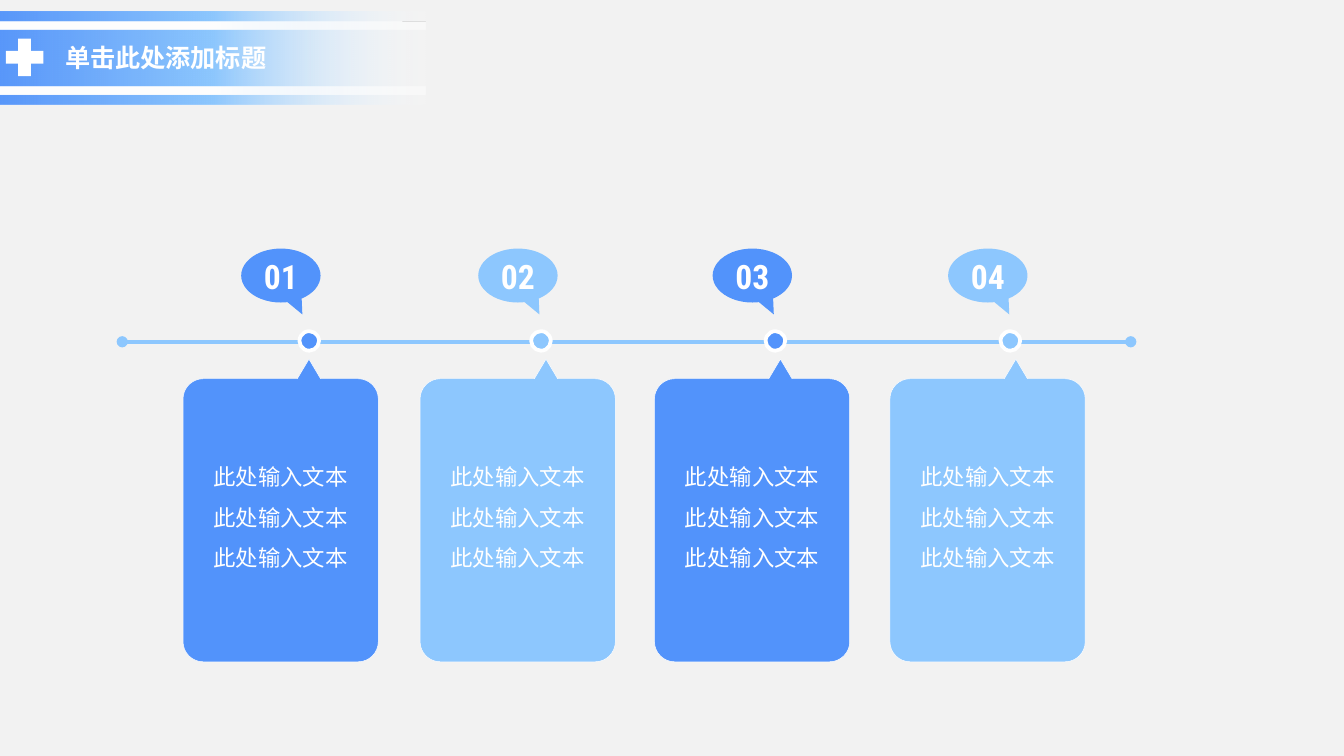
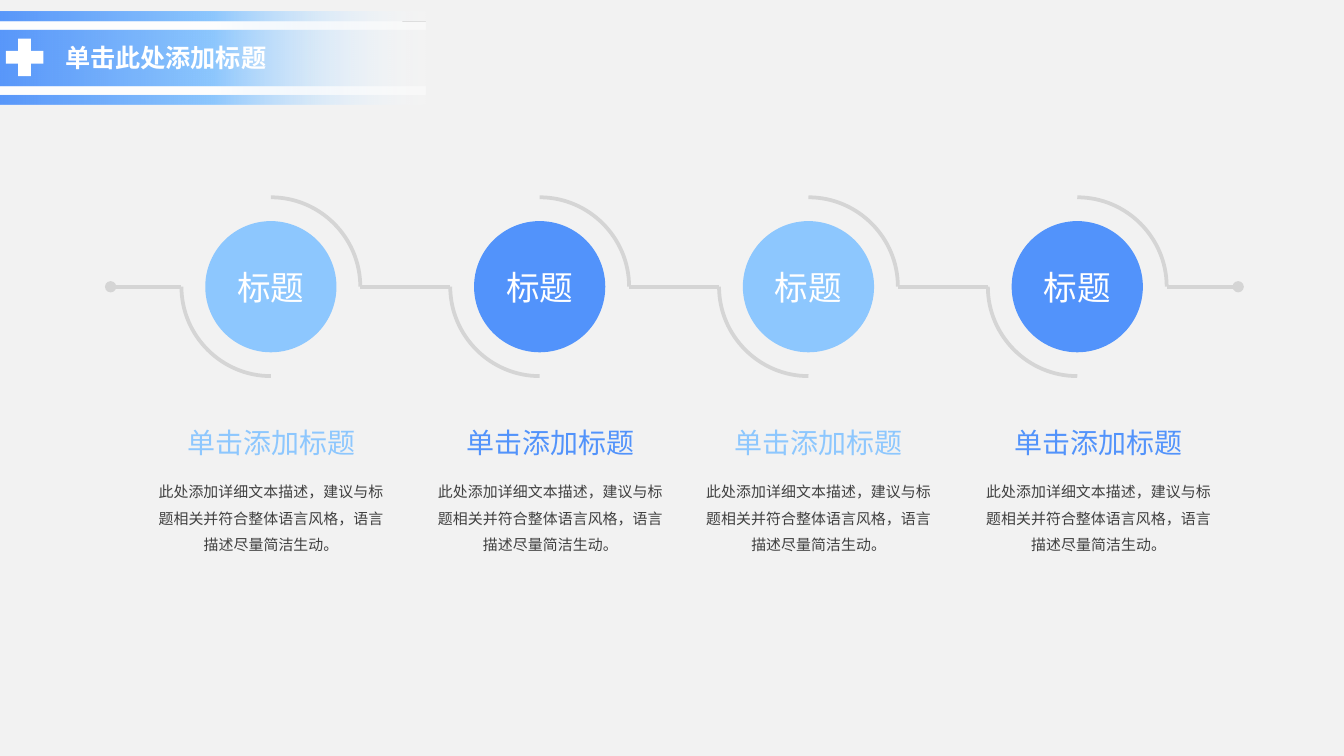
import math
from dataclasses import dataclass
from typing import NamedTuple, Optional

from lxml.etree import SubElement
from pptx import Presentation
from pptx.dml.color import RGBColor
from pptx.enum.shapes import MSO_CONNECTOR, MSO_SHAPE
from pptx.enum.text import MSO_ANCHOR, MSO_AUTO_SIZE, PP_ALIGN
from pptx.oxml.ns import qn
from pptx.util import Cm, Pt

RECT, OVAL, CROSS = MSO_SHAPE.RECTANGLE, MSO_SHAPE.OVAL, MSO_SHAPE.CROSS
CALLOUT = MSO_SHAPE.OVAL_CALLOUT
STRAIGHT = MSO_CONNECTOR.STRAIGHT
TOP, MIDDLE = MSO_ANCHOR.TOP, MSO_ANCHOR.MIDDLE
LEFT, CENTER = PP_ALIGN.LEFT, PP_ALIGN.CENTER
NO_AUTOFIT = MSO_AUTO_SIZE.NONE
TITLE_ONLY = 5
KAPPA = 0.55  # handle length of a quarter circle, per radius


@dataclass(frozen=True)
class Theme:
    paper: str = "F2F2F2"
    white: str = "FFFFFF"
    blue: str = "5293FB"
    sky: str = "8DC7FE"
    grey: str = "D5D5D5"
    ink: str = "404040"
    cjk: str = "Noto Sans CJK SC"
    digits: str = "Roboto Condensed"
    title_size: float = 13.5
    badge_size: float = 18
    heading_size: float = 15
    card_size: float = 12
    body_size: float = 8
    rule: float = 2
    outline: float = 0.25


T = Theme()


class Box(NamedTuple):
    """Left, top, width and height in centimetres."""
    x: float
    y: float
    w: float
    h: float


class Stop(NamedTuple):
    pos: int
    color: str
    alpha: int = 100


class Style(NamedTuple):
    size: float
    color: str = T.white
    font: str = T.cjk
    bold: bool = False
    spacing: float = 1


class Inset(NamedTuple):
    x: float
    y: float


class Step(NamedTuple):
    number: str
    color: str
    left: float
    dot_left: float


class Stage(NamedTuple):
    color: str
    text_left: float


class Bar(NamedTuple):
    box: Box
    stops: tuple


NO_INSET, DISC_INSET, TEXT_INSET = Inset(0, 0), Inset(0.18, 0.1), Inset(0.25, 0.13)

TITLE = "单击此处添加标题"
TITLE_BOX = Box(0.99, 0.67, 5.61, 0.84)
BLUE_FADE = (Stop(0, T.blue, 95), Stop(50, T.sky), Stop(100, T.white, 8))
WHITE_FADE = (Stop(0, T.white), Stop(50, T.white), Stop(100, T.white, 50))
BARS = (
    Bar(Box(0, 0.22, 8.05, 1.76), BLUE_FADE),
    Bar(Box(0, 0.41, 8.05, 0.15), WHITE_FADE),
    Bar(Box(0, 1.64, 8.05, 0.15), WHITE_FADE),
)

STEPS = (
    Step("01", T.blue, 3.46, 5.66),
    Step("02", T.sky, 7.94, 10.04),
    Step("03", T.blue, 12.37, 14.47),
    Step("04", T.sky, 16.82, 18.91),
)
CARD_LINES = ("此处输入文本",) * 3
TIMELINE_Y = 6.46
CARD_TIP, CARD_TOP, CARD_BOTTOM, CARD_W = 6.79, 7.16, 12.51, 3.69
CARD_RADIUS = 0.38
TIP_X, TIP_HALF = 2.38, 0.22

STAGES = (
    Stage(T.sky, 2.9),
    Stage(T.blue, 8.18),
    Stage(T.sky, 13.25),
    Stage(T.blue, 18.54),
)
STAGE_X, STAGE_PITCH, STAGE_Y = 5.12, 5.08, 5.42
DISC, RING_RADIUS = 2.48, 1.69
CHAIN_START, CHAIN_END = 2.09, 23.4
TEXT_W, HEADING_W = 4.45, 3.71
DESCRIPTION = "此处添加详细文本描述，建议与标题相关并符合整体语言风格，语言描述尽量简洁生动。"


def rgb(color: str) -> RGBColor:
    return RGBColor.from_string(color)


def cm(box: Box) -> tuple:
    return tuple(Cm(v) for v in box)


def paint(sp, fill: Optional[str], line: Optional[str] = None,
          width: float = T.rule) -> None:
    sp.shadow.inherit = False
    if fill:
        sp.fill.solid()
        sp.fill.fore_color.rgb = rgb(fill)
    else:
        sp.fill.background()
    if line:
        sp.line.color.rgb = rgb(line)
        sp.line.width = Pt(width)
    else:
        sp.line.fill.background()


def add_preset(s, kind, box: Box, fill: Optional[str], line: Optional[str] = None):
    sp = s.shapes.add_shape(kind, *cm(box))
    paint(sp, fill, line)
    return sp


def set_gradient(sp, stops: tuple) -> None:
    """Fill from left to right, with transparent stops."""
    sp.fill.gradient()
    sp.fill.gradient_angle = 0
    gs_list = sp.element.spPr.find(qn("a:gradFill")).find(qn("a:gsLst"))
    for gs in list(gs_list):
        gs_list.remove(gs)
    for stop in stops:
        gs = SubElement(gs_list, qn("a:gs"), pos=str(stop.pos * 1000))
        color = SubElement(gs, qn("a:srgbClr"), val=stop.color)
        SubElement(color, qn("a:alpha"), val=str(stop.alpha * 1000))


def write(sp, lines: tuple, style: Style, align=CENTER, anchor=MIDDLE,
          wrap: bool = True, inset: Inset = TEXT_INSET) -> None:
    tf = sp.text_frame
    tf.word_wrap = wrap
    tf.auto_size = NO_AUTOFIT
    tf.vertical_anchor = anchor
    tf.margin_left = tf.margin_right = Cm(inset.x)
    tf.margin_top = tf.margin_bottom = Cm(inset.y)
    for i, line in enumerate(lines):
        p = tf.add_paragraph() if i else tf.paragraphs[0]
        p.alignment = align
        p.line_spacing = style.spacing
        r = p.add_run()
        r.text = line
        r.font.size = Pt(style.size)
        r.font.bold = style.bold
        r.font.color.rgb = rgb(style.color)
        r.font.name = style.font
        SubElement(r._r.get_or_add_rPr(), qn("a:ea"), typeface=style.font)


def add_rule(s, x1: float, x2: float, y: float, color: str,
             head: bool = False, tail: bool = False) -> None:
    """Horizontal line with optional round ends."""
    line = s.shapes.add_connector(STRAIGHT, Cm(x1), Cm(y), Cm(x2), Cm(y))
    line.line.color.rgb = rgb(color)
    line.line.width = Pt(T.rule)
    sp_pr = line.element.spPr
    ln = sp_pr.find(qn("a:ln"))
    for tag, wanted in (("a:headEnd", head), ("a:tailEnd", tail)):
        if wanted:
            SubElement(ln, qn(tag), type="oval")
    SubElement(sp_pr, qn("a:effectLst"))


def quarter(cx: float, cy: float, radius: float, start: int) -> list:
    """Start, two handles and end of a clockwise quarter; 0 degrees points right."""
    ux, uy = math.cos(math.radians(start)), math.sin(math.radians(start))
    vx, vy = -uy, ux
    weights = ((1, 0), (1, KAPPA), (KAPPA, 1), (0, 1))
    return [(cx + radius * (a * ux + b * vx), cy + radius * (a * uy + b * vy))
            for a, b in weights]


def add_outline(s, points: list, curves: tuple, close: bool):
    """Outline whose segments from each index in curves join, by threes, to a curve."""
    pts = [(Cm(x), Cm(y)) for x, y in points]
    builder = s.shapes.build_freeform(*pts[0])
    builder.add_line_segments(pts[1:], close=close)
    sp = builder.convert_to_shape()
    segments = list(sp.element.iter(qn("a:lnTo")))
    for first in curves:
        path = segments[first].getparent()
        curve = SubElement(path, qn("a:cubicBezTo"))
        path.replace(segments[first], curve)
        for segment in segments[first:first + 3]:
            curve.append(segment.find(qn("a:pt")))
        for segment in segments[first + 1:first + 3]:
            path.remove(segment)
    return sp


def add_titled_slide(prs):
    s = prs.slides.add_slide(prs.slide_layouts[TITLE_ONLY])
    for bar in BARS:
        set_gradient(add_preset(s, RECT, bar.box, T.white), bar.stops)
    cross = add_preset(s, CROSS, Box(0.11, 0.73, 0.71, 0.71), T.white)
    cross.adjustments[0] = 0.33
    title = s.shapes.title
    s.shapes.element.append(title.element)  # bring in front of the bars
    title.left, title.top, title.width, title.height = cm(TITLE_BOX)
    write(title, (TITLE,), Style(T.title_size, bold=True), LEFT, TOP)
    return s


def add_card(s, step: Step) -> None:
    left, right = step.left, step.left + CARD_W
    tip, rad = left + TIP_X, CARD_RADIUS
    points = [(tip, CARD_TIP), (tip + TIP_HALF, CARD_TOP)]
    corners = (
        (right - rad, CARD_TOP + rad, -90),
        (right - rad, CARD_BOTTOM - rad, 0),
        (left + rad, CARD_BOTTOM - rad, 90),
        (left + rad, CARD_TOP + rad, 180),
    )
    for cx, cy, start in corners:
        points += quarter(cx, cy, rad, start)
    points.append((tip - TIP_HALF, CARD_TOP))
    card = add_outline(s, points, (2, 6, 10, 14), close=True)
    paint(card, step.color, T.white, T.outline)
    write(card, CARD_LINES, Style(T.card_size, spacing=1.5))


def add_step(s, step: Step) -> None:
    add_preset(s, OVAL, Box(step.dot_left, 6.26, 0.37, 0.37), step.color, T.white)
    bubble = add_preset(s, CALLOUT, Box(step.left + 1.1, 4.7, 1.5, 1.02), step.color)
    bubble.adjustments[0], bubble.adjustments[1] = 0.27, 0.72
    write(bubble, (step.number,), Style(T.badge_size, font=T.digits, bold=True),
          inset=NO_INSET)
    add_card(s, step)


def add_stage(s, stage: Stage, cx: float) -> None:
    disc = add_preset(
        s, OVAL, Box(cx - DISC / 2, STAGE_Y - DISC / 2, DISC, DISC), stage.color)
    write(disc, ("标题",), Style(T.badge_size), inset=DISC_INSET)
    for start in (-90, 90):
        arc = add_outline(s, quarter(cx, STAGE_Y, RING_RADIUS, start), (0,), close=False)
        paint(arc, None, T.grey)

    heading_left = stage.text_left + (TEXT_W - HEADING_W) / 2
    heading = s.shapes.add_textbox(*cm(Box(heading_left, 7.92, HEADING_W, 0.89)))
    write(heading, ("单击添加标题",), Style(T.heading_size, stage.color),
          anchor=TOP, wrap=False)
    body = s.shapes.add_textbox(*cm(Box(stage.text_left, 8.95, TEXT_W, 2.74)))
    write(body, (DESCRIPTION,), Style(T.body_size, T.ink, spacing=1.5),
          anchor=TOP, inset=NO_INSET)


def build_timeline(prs) -> None:
    s = add_titled_slide(prs)
    add_rule(s, 2.31, 21.37, TIMELINE_Y, T.sky, head=True, tail=True)
    for step in STEPS:
        add_step(s, step)


def build_chain(prs) -> None:
    s = add_titled_slide(prs)
    centers = [STAGE_X + i * STAGE_PITCH for i in range(len(STAGES))]
    starts = [CHAIN_START] + [cx + RING_RADIUS for cx in centers]
    ends = [cx - RING_RADIUS for cx in centers] + [CHAIN_END]
    for x1, x2 in zip(starts, ends):
        add_rule(s, x1, x2, STAGE_Y, T.grey,
                 head=x1 == CHAIN_START, tail=x2 == CHAIN_END)
    for stage, cx in zip(STAGES, centers):
        add_stage(s, stage, cx)


def main() -> None:
    prs = Presentation()
    prs.slide_width, prs.slide_height = Cm(25.4), Cm(14.29)
    fill = prs.slide_master.background.fill
    fill.solid()
    fill.fore_color.rgb = rgb(T.paper)
    build_timeline(prs)
    build_chain(prs)
    prs.save("out.pptx")


if __name__ == "__main__":
    main()
